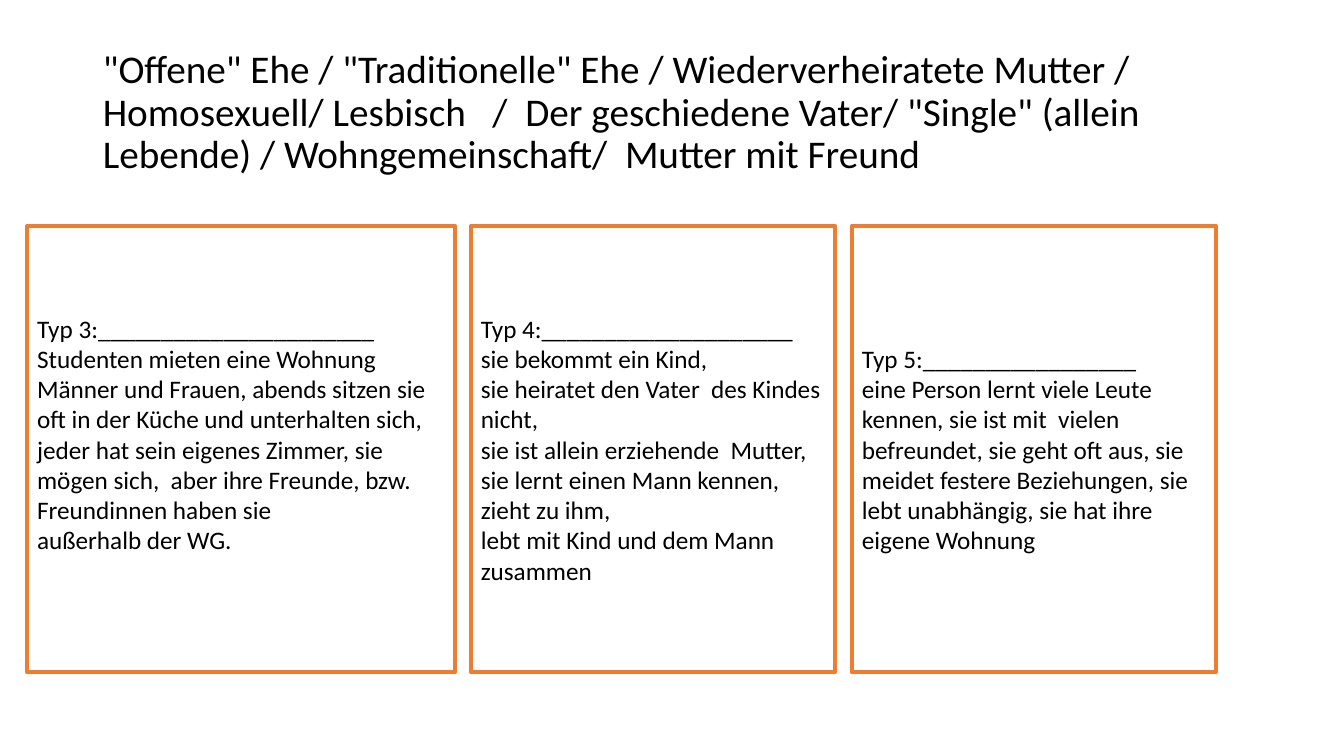
from pptx import Presentation
from pptx.dml.color import RGBColor
from pptx.enum.shapes import MSO_SHAPE
from pptx.enum.text import MSO_ANCHOR, PP_ALIGN
from pptx.util import Inches, Pt

RECT = MSO_SHAPE.RECTANGLE
MIDDLE = MSO_ANCHOR.MIDDLE
LEFT = PP_ALIGN.LEFT
TITLE_ONLY = 5
FONT = "Calibri"
COLORS = {"text": "000000", "fill": "FFFFFF", "line": "ED7D31"}

TITLE = (
    '"Offene" Ehe / "Traditionelle" Ehe / Wiederverheiratete Mutter / '
    'Homosexuell/ Lesbisch   /  Der geschiedene Vater/ "Single" (allein '
    "Lebende) / Wohngemeinschaft/  Mutter mit Freund"
)
TOP, HEIGHT = 2.24, 4.43
CARDS = [
    (0.27, 4.24, 0.35, [
        "Typ 3:______________________",
        "Studenten mieten eine Wohnung",
        "Männer und Frauen, abends sitzen sie oft in der Küche und "
        "unterhalten sich,",
        "jeder hat sein eigenes Zimmer, sie mögen sich,  aber ihre Freunde, "
        "bzw. Freundinnen haben sie",
        "außerhalb der WG.",
    ]),
    (4.67, 3.61, 0.05, [
        "Typ 4:____________________",
        "sie bekommt ein Kind,",
        "sie heiratet den Vater  des Kindes nicht,",
        "sie ist allein erziehende  Mutter, sie lernt einen Mann kennen, "
        "zieht zu ihm,",
        "lebt mit Kind und dem Mann zusammen",
    ]),
    (8.45, 3.61, 0.05, [
        "Typ 5:_________________",
        "eine Person lernt viele Leute kennen, sie ist mit  vielen "
        "befreundet, sie geht oft aus, sie meidet festere Beziehungen, sie "
        "lebt unabhängig, sie hat ihre eigene Wohnung",
    ]),
]


def color(name):
    """Return a named colour."""
    return RGBColor.from_string(COLORS[name])


def write(frame, lines, size):
    """Fill a text frame with left-aligned paragraphs."""
    frame.word_wrap = True
    frame.vertical_anchor = MIDDLE
    frame.text = "\n".join(lines)
    for para in frame.paragraphs:
        para.alignment = LEFT
        para.font.name = FONT
        para.font.size = Pt(size)
        para.font.color.rgb = color("text")


def add_title(slide):
    """Place and format the title."""
    title = slide.shapes.title
    title.left, title.top = Inches(0.92), Inches(0.4)
    title.width, title.height = Inches(11.5), Inches(1.45)
    write(title.text_frame, [TITLE], 28)
    title.text_frame.paragraphs[0].line_spacing = 0.9


def add_card(slide, left, width, bottom, lines):
    """Add one framed card describing a family type."""
    card = slide.shapes.add_shape(
        RECT, Inches(left), Inches(TOP), Inches(width), Inches(HEIGHT))
    card.shadow.inherit = False
    card.fill.solid()
    card.fill.fore_color.rgb = color("fill")
    card.line.color.rgb = color("line")
    card.line.width = Pt(3)
    card.text_frame.margin_bottom = Inches(bottom)
    write(card.text_frame, lines, 18)


def main():
    """Build the slide and save it."""
    deck = Presentation()
    deck.slide_width, deck.slide_height = Inches(13.33), Inches(7.5)
    slide = deck.slides.add_slide(deck.slide_layouts[TITLE_ONLY])
    add_title(slide)
    for card in CARDS:
        add_card(slide, *card)
    deck.save("out.pptx")


if __name__ == "__main__":
    main()
